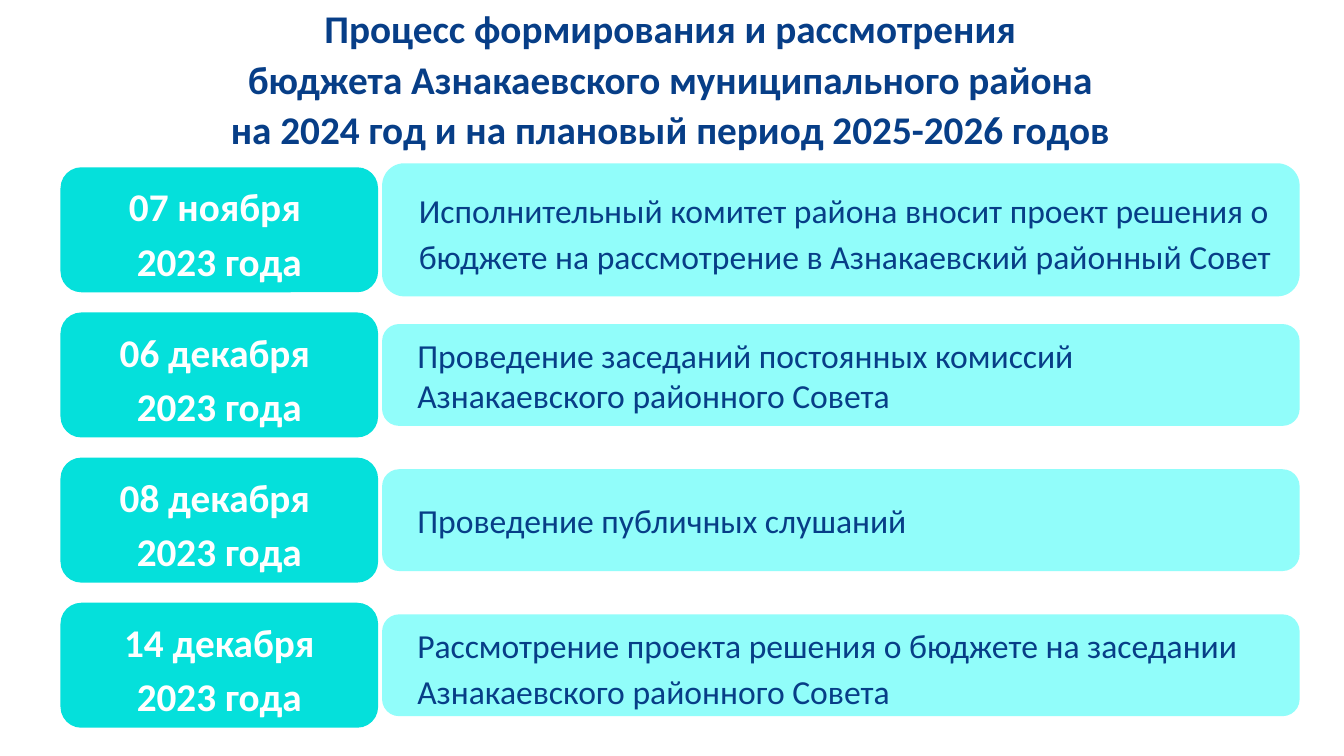
from dataclasses import dataclass

from pptx import Presentation
from pptx.dml.color import RGBColor
from pptx.enum.shapes import MSO_SHAPE
from pptx.enum.text import MSO_ANCHOR, MSO_AUTO_SIZE, PP_ALIGN
from pptx.util import Inches, Pt


@dataclass(frozen=True)
class Theme:
    font: str = "Calibri"
    navy: str = "073E87"
    white: str = "FFFFFF"
    date_fill: str = "05E0DB"
    step_fill: str = "91FDFA"
    large: int = 28
    body: int = 24


class SlideBuilder:
    def __init__(self, s, theme):
        self.s = s
        self.theme = theme

    def style(self, p, size, color, bold, spacing, align):
        p.font.name = self.theme.font
        p.font.size = Pt(size)
        p.font.bold = bold
        p.font.color.rgb = RGBColor.from_string(color)
        p.line_spacing = spacing
        p.alignment = align

    def title(self, text, left, top, width, height):
        t = self.theme
        sp = self.s.shapes.title
        sp.left, sp.top = Inches(left), Inches(top)
        sp.width, sp.height = Inches(width), Inches(height)
        tf = sp.text_frame
        tf.text = text
        tf.word_wrap = True
        tf.auto_size = MSO_AUTO_SIZE.NONE
        tf.vertical_anchor = MSO_ANCHOR.TOP
        for p in tf.paragraphs:
            self.style(p, t.large, t.navy, True, 0.9, PP_ALIGN.CENTER)
            p.space_before = Pt(0.2 * t.large)

    def box(self, text, left, top, width, height, fill):
        sp = self.s.shapes.add_shape(
            MSO_SHAPE.ROUNDED_RECTANGLE,
            Inches(left), Inches(top), Inches(width), Inches(height))
        sp.shadow.inherit = False
        sp.fill.solid()
        sp.fill.fore_color.rgb = RGBColor.from_string(fill)
        sp.line.fill.background()
        tf = sp.text_frame
        tf.text = text
        tf.word_wrap = True
        tf.vertical_anchor = MSO_ANCHOR.MIDDLE
        return tf

    def date(self, text, left, top, width, height):
        t = self.theme
        tf = self.box(text, left, top, width, height, t.date_fill)
        for p in tf.paragraphs:
            self.style(p, t.large, t.white, True, 1.15, PP_ALIGN.CENTER)

    def step(self, text, left, top, width, height, spacing):
        t = self.theme
        tf = self.box(text, left, top, width, height, t.step_fill)
        tf.margin_left = Inches(0.2)
        p = tf.paragraphs[0]
        self.style(p, t.body, t.navy, False, spacing, PP_ALIGN.LEFT)
        # Paragraph indent
        pPr = p._p.get_or_add_pPr()
        pPr.set("marL", str(Inches(0.1)))
        pPr.set("indent", "0")


TITLE = ("Процесс формирования и рассмотрения\n"
         "бюджета Азнакаевского муниципального района\n"
         "на 2024 год и на плановый период 2025-2026 годов")

# Date, step, step height, line spacing
STAGES = [
    ("07 ноября \n2023 года",
     "Исполнительный комитет района вносит проект решения о бюджете "
     "на рассмотрение в Азнакаевский районный Совет", 1.32, 1.14),
    ("06 декабря \v2023 года",
     "Проведение заседаний постоянных комиссий "
     "Азнакаевского районного Совета", 1.01, 1.0),
    ("08 декабря \v2023 года",
     "Проведение публичных слушаний", 1.01, 1.0),
    ("14 декабря\v2023 года",
     "Рассмотрение проекта решения о бюджете на заседании "
     "Азнакаевского районного Совета", 1.01, 1.15),
]
FIRST_TOP, PITCH, DATE_HEIGHT = 1.66, 1.44, 1.24


def main():
    prs = Presentation()
    prs.slide_width, prs.slide_height = Inches(13.33), Inches(7.5)
    s = prs.slides.add_slide(prs.slide_layouts[5])
    builder = SlideBuilder(s, Theme())

    # Heading
    builder.title(TITLE, 0.75, 0.05, 11.79, 0.63)

    # Timeline rows: each step is centred on its date
    for i, (date, step, height, spacing) in enumerate(STAGES):
        top = FIRST_TOP + i * PITCH
        step_top = top + (DATE_HEIGHT - height) / 2
        builder.step(step, 3.79, step_top, 9.1, height, spacing)
        builder.date(date, 0.6, top, 3.15, DATE_HEIGHT)

    prs.save("out.pptx")


if __name__ == "__main__":
    main()
